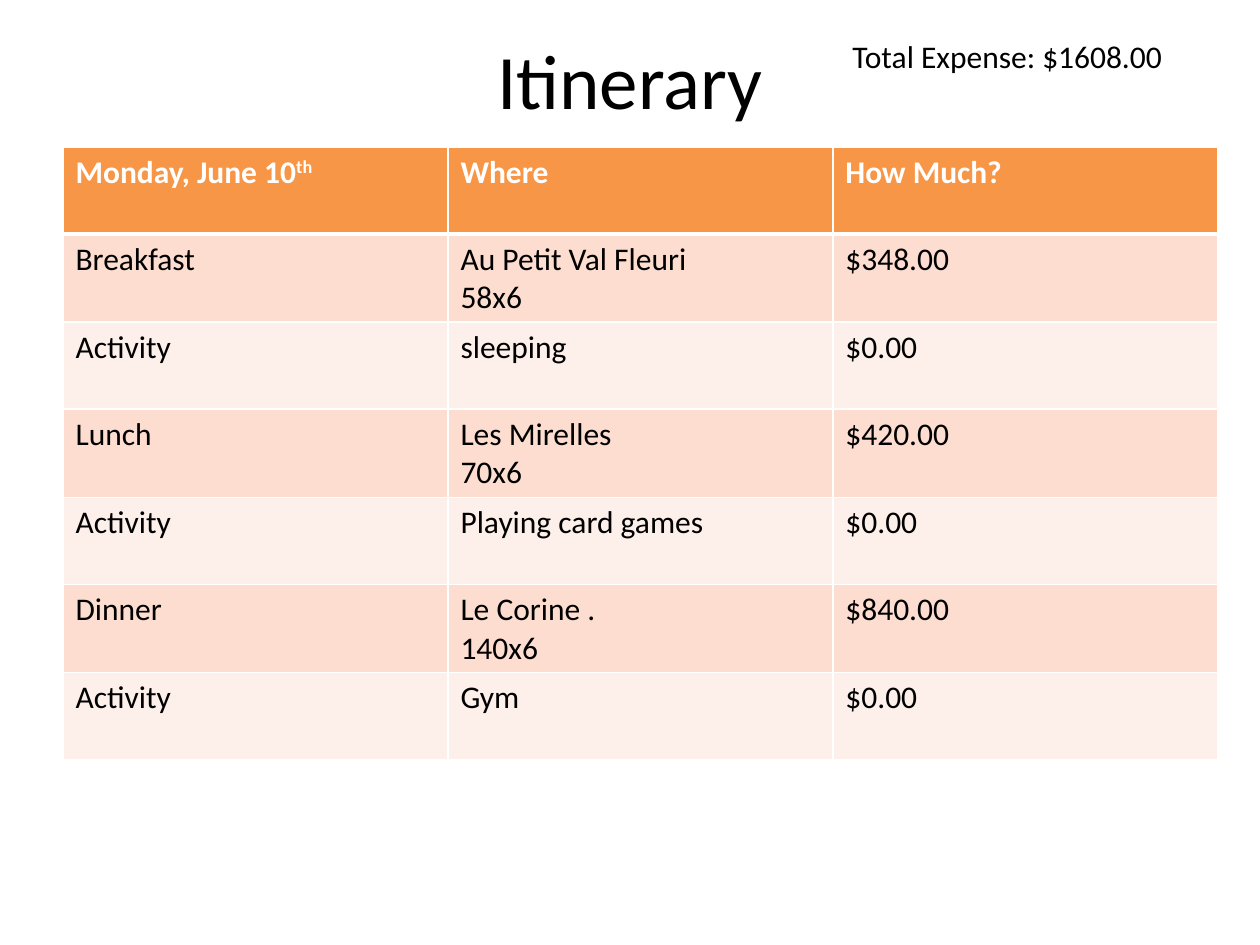
from lxml import etree
from pptx import Presentation
from pptx.dml.color import RGBColor
from pptx.enum.text import MSO_ANCHOR, PP_ALIGN
from pptx.oxml.ns import qn
from pptx.util import Pt

TITLE = "Itinerary"
TOTAL = "Total Expense: $1608.00"
DAY, DAY_SUFFIX = "Monday, June 10", "th"
ROWS = [
    (DAY, "Where", "How Much?"),
    ("Breakfast", "Au Petit Val Fleuri\n58x6", "$348.00"),
    ("Activity", "sleeping", "$0.00"),
    ("Lunch", "Les Mirelles\n70x6", "$420.00"),
    ("Activity", "Playing card games", "$0.00"),
    ("Dinner", "Le Corine .\n140x6", "$840.00"),
    ("Activity", "Gym", "$0.00"),
]

PX = 914400 // 126
FONT = "Calibri"
BLACK = RGBColor(0x00, 0x00, 0x00)
WHITE = RGBColor(0xFF, 0xFF, 0xFF)
ORANGE = RGBColor(0xF7, 0x96, 0x46)
BANDS = (RGBColor(0xFD, 0xEF, 0xE9), RGBColor(0xFC, 0xDD, 0xCF))
TABLE_LEFT, TABLE_TOP = 63, 147
COLUMN_WIDTH, ROW_HEIGHT = 385, 87
CENTER, MIDDLE = PP_ALIGN.CENTER, MSO_ANCHOR.MIDDLE


def box(*lengths):
    return [length * PX for length in lengths]


def format_text(frame, size, color, bold=False):
    for paragraph in frame.paragraphs:
        for run in paragraph.runs:
            run.font.name = FONT
            run.font.size = Pt(size)
            run.font.bold = bold
            run.font.color.rgb = color


def set_borders(cell, bottom_width):
    properties = cell._tc.get_or_add_tcPr()
    for side, width in (("L", 1), ("R", 1), ("T", 1), ("B", bottom_width)):
        line = etree.SubElement(properties, qn(f"a:ln{side}"), w=str(Pt(width)))
        fill = etree.SubElement(line, qn("a:solidFill"))
        etree.SubElement(fill, qn("a:srgbClr"), val=str(WHITE))


def add_itinerary(slide):
    row_count, column_count = len(ROWS), len(ROWS[0])
    table = slide.shapes.add_table(
        row_count, column_count,
        *box(TABLE_LEFT, TABLE_TOP, column_count * COLUMN_WIDTH, row_count * ROW_HEIGHT),
    ).table
    for r, row in enumerate(ROWS):
        is_header = r == 0
        for c, text in enumerate(row):
            cell = table.cell(r, c)
            cell.text_frame.text = text
            format_text(cell.text_frame, 18, WHITE if is_header else BLACK, is_header)
            set_borders(cell, 3 if is_header else 1)
            cell.fill.solid()
            cell.fill.fore_color.rgb = ORANGE if is_header else BANDS[r % 2]

    day_frame = table.cell(0, 0).text_frame
    suffix = day_frame.paragraphs[0].add_run()
    suffix.text = DAY_SUFFIX
    format_text(day_frame, 18, WHITE, True)
    suffix.font._element.set("baseline", "30000")


def main():
    presentation = Presentation()
    presentation.slide_width, presentation.slide_height = box(1260, 945)
    slide = presentation.slides.add_slide(presentation.slide_layouts[5])

    title = slide.shapes.title
    title.left, title.top, title.width, title.height = box(63, 0, 1134, 158)
    title.text_frame.text = TITLE
    title.text_frame.vertical_anchor = MIDDLE
    title.text_frame.paragraphs[0].alignment = CENTER
    format_text(title.text_frame, 44, BLACK)

    total = slide.shapes.add_textbox(*box(840, 31, 388, 51)).text_frame
    total.word_wrap = True
    total.text = TOTAL
    format_text(total, 18, BLACK)

    add_itinerary(slide)
    presentation.save("out.pptx")


if __name__ == "__main__":
    main()
